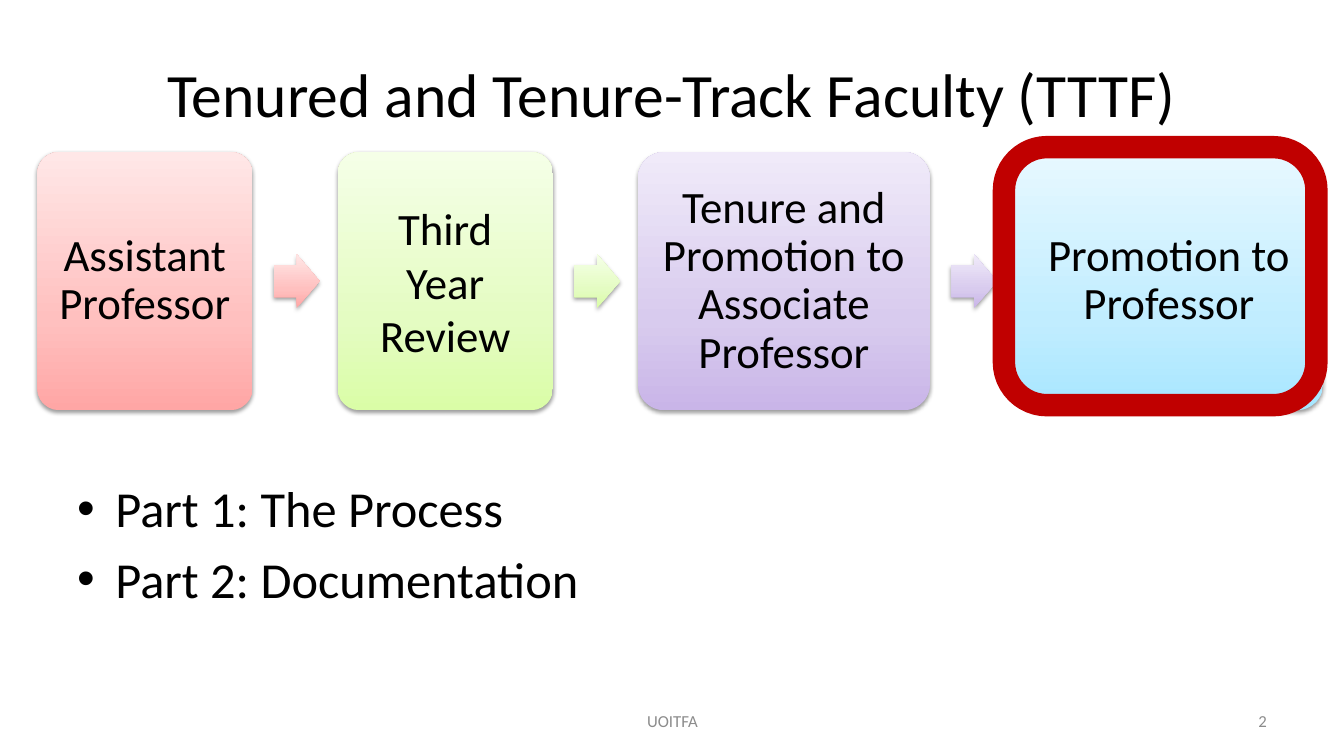
from lxml import etree
from pptx import Presentation
from pptx.dml.color import RGBColor
from pptx.enum import shapes, text
from pptx.oxml import ns
from pptx import util as u

FONT = "Calibri"
WIDTH, HEIGHT = u.Inches(13.33), u.Inches(7.5)
COLORS = {"text": "000000", "footer": "8C8C8C", "frame": "C00000"}
# Gradient stops from bottom to top
GRADIENTS = {
    "red": ("FFA6A5", "FFC0BF", "FFE7E7"),
    "green": ("DAFDA7", "E4FCC2", "F5FFE7"),
    "purple": ("C9B5E8", "D8CBEE", "F0EAF9"),
    "blue": ("A7E6FF", "C1EDFF", "E7F8FF"),
}
STOPS = (0, 35, 100)
# Label, gradient, width in percent of the slide, line spacing
STEPS = [
    ("Assistant Professor", "red", 16, 0.9),
    ("Third Year Review", "green", 16, 1.0),
    ("Tenure and Promotion to\vAssociate Professor", "purple", 21.7, 0.9),
    ("Promotion to\vProfessor", "blue", 22.9, 0.9),
]
STEP_LEFT, STEP_TOP, STEP_HEIGHT, STEP_GAP = 2.78, 20.13, 34.13, 6.35
ARROW_OFFSET, ARROW_WIDTH, ARROW_HEIGHT = 1.6, 3.4, 7.07


def place(left, top, width, height):
    """Turn percentages of the slide into lengths."""
    return (int(WIDTH * left / 100), int(HEIGHT * top / 100),
            int(WIDTH * width / 100), int(HEIGHT * height / 100))


def add_xml(parent, tag, **attrs):
    return etree.SubElement(parent, ns.qn(tag), {k: str(v) for k, v in attrs.items()})


def write(tf, lines, size, color="text", align=text.PP_ALIGN.CENTER,
          anchor=text.MSO_ANCHOR.MIDDLE, spacing=1.0, bullets=False):
    tf.word_wrap = True
    tf.vertical_anchor = anchor
    for i, line in enumerate(lines):
        p = tf.add_paragraph() if i else tf.paragraphs[0]
        p.text = line
        p.alignment = align
        p.line_spacing = spacing
        if bullets:
            pPr = p._p.get_or_add_pPr()
            indent = u.Inches(0.38)
            pPr.set("marL", str(indent))
            pPr.set("indent", str(-indent))
            if i:
                p.space_before = u.Pt(size * 0.2)
            add_xml(pPr, "a:buFont", typeface="Arial")
            add_xml(pPr, "a:buChar", char="•")
        for r in p.runs:
            r.font.name = FONT
            r.font.size = u.Pt(size)
            r.font.color.rgb = RGBColor.from_string(COLORS[color])


def add_text(slide, area, lines, size, **style):
    write(slide.shapes.add_textbox(*place(*area)).text_frame, lines, size, **style)


def add_gradient_shape(slide, kind, area, gradient, adjustments):
    sp = slide.shapes.add_shape(kind, *place(*area))
    for i, value in enumerate(adjustments):
        sp.adjustments[i] = value
    sp.line.fill.background()
    sp.fill.gradient()
    sp.fill.gradient_angle = 90
    spPr = sp._element.spPr
    stops = spPr.find(".//" + ns.qn("a:gsLst"))
    for old in list(stops):
        stops.remove(old)
    for pos, color in zip(STOPS, GRADIENTS[gradient]):
        add_xml(add_xml(stops, "a:gs", pos=pos * 1000), "a:srgbClr", val=color)
    # Soft shadow below the shape
    sp.shadow.inherit = False
    shadow = add_xml(spPr.find(ns.qn("a:effectLst")), "a:outerShdw", blurRad=u.Pt(3.1),
                     dist=u.Pt(1.6), dir=90 * 60000, rotWithShape=0)
    add_xml(add_xml(shadow, "a:srgbClr", val="000000"), "a:alpha", val=38000)
    return sp


def add_process(slide):
    left = STEP_LEFT
    arrow_top = STEP_TOP + (STEP_HEIGHT - ARROW_HEIGHT) / 2
    for i, (label, gradient, width, spacing) in enumerate(STEPS):
        sp = add_gradient_shape(slide, shapes.MSO_SHAPE.ROUNDED_RECTANGLE,
                                (left, STEP_TOP, width, STEP_HEIGHT), gradient, [0.1])
        tf = sp.text_frame
        tf.margin_left = tf.margin_right = u.Inches(0.13)
        tf.margin_top = tf.margin_bottom = u.Inches(0.13)
        write(tf, [label], 32, spacing=spacing)
        if i < len(STEPS) - 1:
            area = (left + width + ARROW_OFFSET, arrow_top, ARROW_WIDTH, ARROW_HEIGHT)
            add_gradient_shape(slide, shapes.MSO_SHAPE.RIGHT_ARROW, area, gradient, [0.6, 0.5])
        left += width + STEP_GAP


def add_frame(slide, area):
    sp = slide.shapes.add_shape(shapes.MSO_SHAPE.ROUNDED_RECTANGLE, *place(*area))
    sp.shadow.inherit = False
    sp.fill.background()
    sp.line.color.rgb = RGBColor.from_string(COLORS["frame"])
    sp.line.width = u.Pt(16)


def main():
    prs = Presentation()
    prs.slide_width, prs.slide_height = WIDTH, HEIGHT
    slide = prs.slides.add_slide(prs.slide_layouts[6])

    # Career steps
    add_process(slide)

    # Title and parts
    add_text(slide, (5, 4, 90, 16.67), ["Tenured and Tenure-Track Faculty (TTTF)"], 44)
    add_text(slide, (5, 62.5, 90, 26.67), ["Part 1: The Process", "Part 2: Documentation"], 36,
             align=text.PP_ALIGN.LEFT, anchor=text.MSO_ANCHOR.TOP, bullets=True)

    # Footer
    add_text(slide, (34.2, 92.67, 31.67, 5.33), ["UOITFA"], 12, color="footer")
    add_text(slide, (71.67, 92.67, 23.33, 5.33), ["2"], 12, color="footer",
             align=text.PP_ALIGN.RIGHT)

    # Highlight on the last step
    add_frame(slide, (74.7, 19.47, 23.25, 34.13))

    prs.save("out.pptx")


if __name__ == "__main__":
    main()
